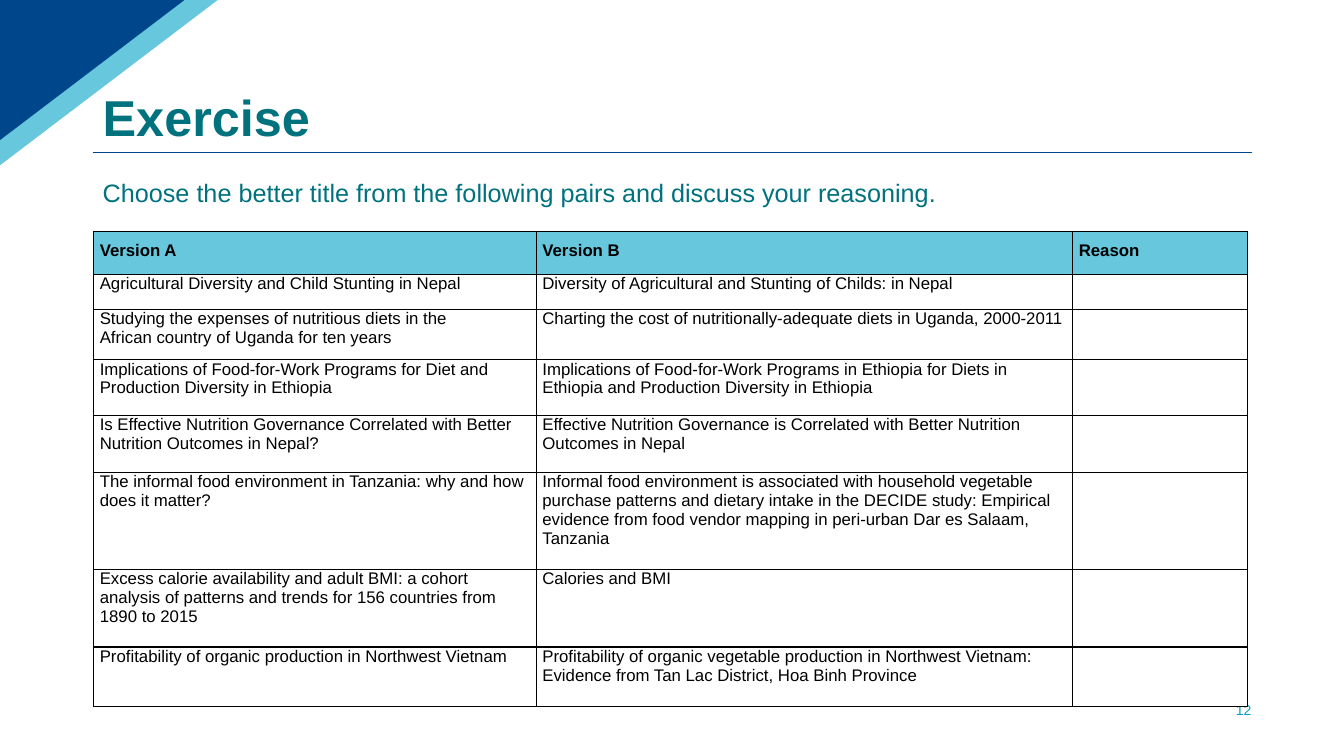
import copy
from dataclasses import dataclass, field
from typing import Any

import pptx
import pptx.dml.color
import pptx.enum.shapes
import pptx.enum.text
import pptx.oxml
import pptx.oxml.ns
import pptx.util

EMU_PER_PX = 9144  # 100 px to the inch
Align = pptx.enum.text.PP_ALIGN
Anchor = pptx.enum.text.MSO_ANCHOR


@dataclass(frozen=True)
class Theme:
    font: str = "Arial"
    navy: str = "00468B"
    cyan: str = "00A2C7"
    pale_cyan: str = "66C7DD"
    teal: str = "00727E"
    black: str = "000000"
    white: str = "FFFFFF"
    title_size: int = 36
    lead_size: int = 18
    table_size: int = 12
    number_size: int = 10


THEME = Theme()


@dataclass(frozen=True)
class Corner:
    width: int
    height: int
    colour: str
    opacity: int


@dataclass(frozen=True)
class Label:
    text: str
    left: int
    top: int
    width: int
    height: int
    size: int
    colour: str
    anchor: Any
    bold: bool = False
    spacing: dict[str, Any] = field(default_factory=dict)


@dataclass(frozen=True)
class TitlePair:
    height: int
    version_a: str
    version_b: str
    space_before: int = 6


CORNERS = [
    Corner(216, 164, THEME.cyan, 60),
    Corner(183, 139, THEME.navy, 100),
]

LABELS = [
    Label("Exercise", 92, 40, 1150, 111, THEME.title_size, THEME.teal,
          Anchor.BOTTOM, True, {"line_spacing": 0.9}),
    Label("12", 1031, 694, 220, 21, THEME.number_size, THEME.cyan,
          Anchor.MIDDLE, False, {"alignment": Align.RIGHT}),
]
LEAD = Label(
    "Choose the better title from the following pairs and discuss your reasoning.",
    92, 171, 1241, 40, THEME.lead_size, THEME.teal, Anchor.MIDDLE)

HEADINGS = ["Version A", "Version B", "Reason"]
HEADING_HEIGHT = 42
COLUMN_WIDTHS = [439, 532, 173]
PAIRS = [
    TitlePair(35, "Agricultural Diversity and Child Stunting in Nepal",
              "Diversity of Agricultural and Stunting of Childs: in Nepal", 18),
    TitlePair(50, "Studying the expenses of nutritious diets in the\n"
              "African country of Uganda for ten years",
              "Charting the cost of nutritionally-adequate diets in Uganda, 2000-2011"),
    TitlePair(55, "Implications of Food-for-Work Programs for Diet and "
              "Production Diversity in Ethiopia",
              "Implications of Food-for-Work Programs in Ethiopia for Diets in "
              "Ethiopia and Production Diversity in Ethiopia"),
    TitlePair(57, "Is Effective Nutrition Governance Correlated with Better "
              "Nutrition Outcomes in Nepal?",
              "Effective Nutrition Governance is Correlated with Better Nutrition "
              "Outcomes in Nepal"),
    TitlePair(96, "The informal food environment in Tanzania: why and how "
              "does it matter?",
              "Informal food environment is associated with household vegetable "
              "purchase patterns and dietary intake in the DECIDE study: Empirical "
              "evidence from food vendor mapping in peri-urban Dar es Salaam, Tanzania"),
    TitlePair(77, "Excess calorie availability and adult BMI: a cohort "
              "analysis of patterns and trends for 156 countries from 1890 to 2015",
              "Calories and BMI"),
    TitlePair(59, "Profitability of organic production in Northwest Vietnam",
              "Profitability of organic vegetable production in Northwest Vietnam: "
              "Evidence from Tan Lac District, Hoa Binh Province"),
]


def px(length: int) -> int:
    return pptx.util.Emu(length * EMU_PER_PX)


def rgb(colour: str) -> pptx.dml.color.RGBColor:
    return pptx.dml.color.RGBColor.from_string(colour)


def apply_format(target: Any, values: dict[str, Any]) -> None:
    for name, value in values.items():
        setattr(target, name, value)


def write(para: Any, text: str, size: int, colour: str, bold: bool,
          spacing: dict[str, Any]) -> None:
    """Fill a paragraph; line breaks take the format of the text around them."""
    para.text = text
    apply_format(para, spacing)
    for span in para.runs:
        apply_format(span.font, {"name": THEME.font, "size": pptx.util.Pt(size),
                                 "bold": bold})
        span.font.color.rgb = rgb(colour)
    for line_break in para._p.findall(pptx.oxml.ns.qn("a:br")):
        line_break.append(copy.deepcopy(para.runs[0].font._rPr))


def add_corner(page: Any, corner: Corner) -> None:
    builder = page.shapes.build_freeform(0, 0, scale=EMU_PER_PX)
    builder.add_line_segments([(corner.width, 0), (0, corner.height)], close=True)
    shape = builder.convert_to_shape()
    shape.shadow.inherit = False
    shape.line.fill.background()
    shape.fill.solid()
    shape.fill.fore_color.rgb = rgb(corner.colour)
    if corner.opacity < 100:
        colour = shape._element.spPr.find(".//" + pptx.oxml.ns.qn("a:srgbClr"))
        alpha = colour.makeelement(pptx.oxml.ns.qn("a:alpha"),
                                   {"val": str(corner.opacity * 1000)})
        colour.append(alpha)


def add_title_rule(page: Any) -> None:
    rule = page.shapes.add_connector(pptx.enum.shapes.MSO_CONNECTOR.STRAIGHT,
                                     px(92), px(151), px(1242), px(151))
    rule.line.color.rgb = rgb(THEME.navy)
    rule.line.width = pptx.util.Pt(0.75)
    properties = rule._element.spPr
    properties.append(properties.makeelement(pptx.oxml.ns.qn("a:effectLst"), {}))


def add_label(page: Any, label: Label) -> None:
    box = page.shapes.add_textbox(px(label.left), px(label.top),
                                  px(label.width), px(label.height))
    apply_format(box.text_frame, {"word_wrap": True, "vertical_anchor": label.anchor})
    write(box.text_frame.paragraphs[0], label.text, label.size, label.colour,
          label.bold, label.spacing)


def style_cell(cell: Any, fill: str) -> None:
    """Give a cell its margins, thin black borders and fill."""
    apply_format(cell, {"margin_left": px(6), "margin_right": px(6),
                        "margin_top": 0, "margin_bottom": 0})
    for side in "LRTB":
        cell._tc.get_or_add_tcPr().append(pptx.oxml.parse_xml(
            f'<a:ln{side} {pptx.oxml.ns.nsdecls("a")} w="12700"><a:solidFill>'
            f'<a:srgbClr val="{THEME.black}"/></a:solidFill></a:ln{side}>'))
    cell.fill.solid()
    cell.fill.fore_color.rgb = rgb(fill)


def add_pairs_table(page: Any) -> None:
    heights = [HEADING_HEIGHT] + [pair.height for pair in PAIRS]
    table = page.shapes.add_table(len(heights), len(HEADINGS), px(93), px(230),
                                  px(sum(COLUMN_WIDTHS)), px(sum(heights))).table
    table.horz_banding = False
    for column, width in zip(table.columns, COLUMN_WIDTHS):
        column.width = px(width)
    for row, height in zip(table.rows, heights):
        row.height = px(height)
    for cell, heading in zip(table.rows[0].cells, HEADINGS):
        style_cell(cell, THEME.pale_cyan)
        write(cell.text_frame.paragraphs[0], heading, THEME.table_size, THEME.black,
              True, {"line_spacing": 1.5})
    for row_index, pair in enumerate(PAIRS, start=1):
        spacing = {"space_before": pptx.util.Pt(pair.space_before),
                   "space_after": pptx.util.Pt(6)}
        for cell, text in zip(table.rows[row_index].cells,
                              [pair.version_a, pair.version_b, ""]):
            style_cell(cell, THEME.white)
            if text:
                write(cell.text_frame.paragraphs[0], text, THEME.table_size,
                      THEME.black, False, spacing)


def main() -> None:
    deck = pptx.Presentation()
    apply_format(deck, {"slide_width": px(1333), "slide_height": px(750)})
    page = deck.slides.add_slide(deck.slide_layouts[6])
    add_title_rule(page)
    for corner in CORNERS:
        add_corner(page, corner)
    for label in LABELS:
        add_label(page, label)
    add_pairs_table(page)
    add_label(page, LEAD)
    deck.save("out.pptx")


if __name__ == "__main__":
    main()
